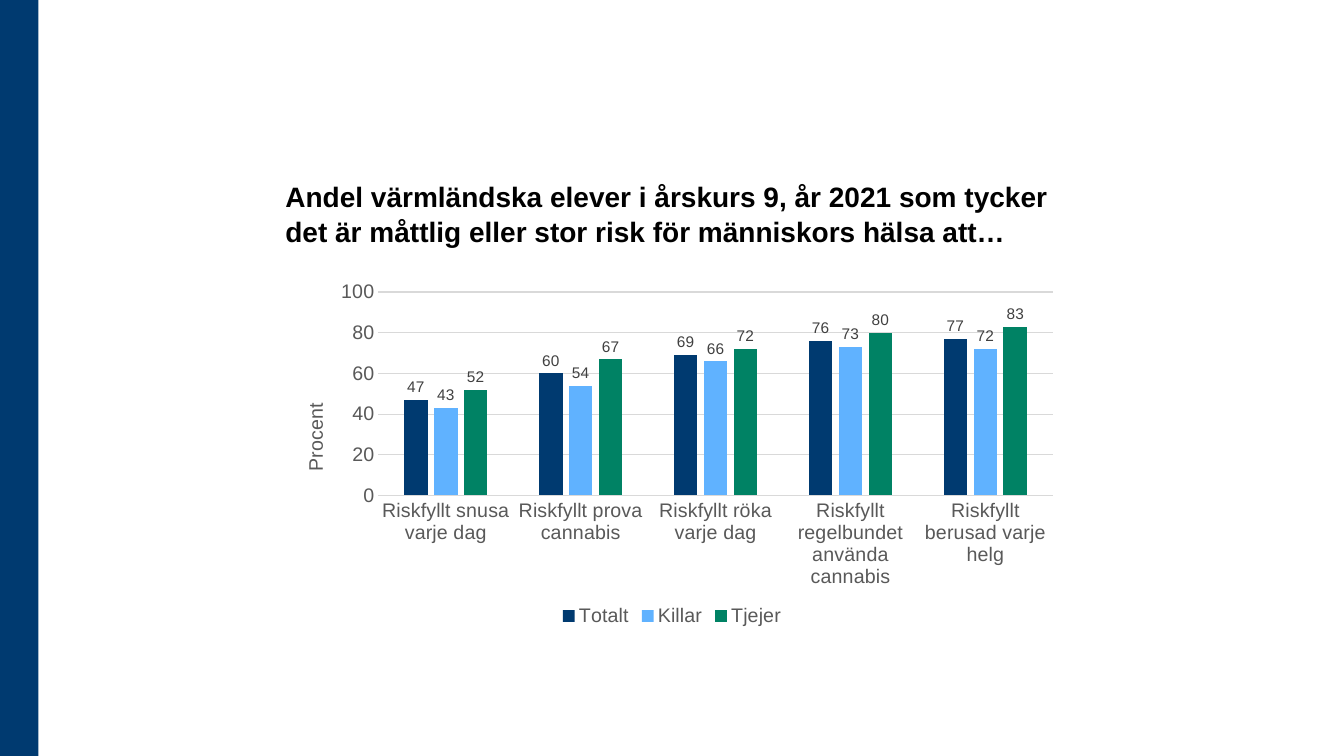
"""Build a slide comparing how risky pupils find tobacco, cannabis and alcohol."""
from dataclasses import dataclass

from lxml.etree import SubElement
from pptx import Presentation
from pptx.chart.data import CategoryChartData
from pptx.dml.color import RGBColor as RGB
from pptx.enum.chart import XL_CHART_TYPE as CHART, XL_LABEL_POSITION as LABEL
from pptx.enum.chart import XL_LEGEND_POSITION as LEGEND, XL_TICK_MARK as TICK
from pptx.enum.shapes import MSO_SHAPE as SHAPE
from pptx.enum.text import MSO_ANCHOR as ANCHOR, PP_ALIGN as ALIGN
from pptx.oxml.ns import qn
from pptx.util import Inches, Pt


@dataclass(frozen=True)
class Theme:
    font: str = "Arial"
    navy: str = "003A70"
    sky: str = "60B2FF"
    green: str = "008264"
    black: str = "000000"
    axis: str = "595959"
    label: str = "404040"
    grid: str = "D9D9D9"
    title_size: int = 20
    axis_size: int = 14
    label_size: int = 11


class SlideBuilder:
    def __init__(self, prs, theme):
        self.theme = theme
        self.slide = prs.slides.add_slide(prs.slide_layouts[5])

    def style(self, font, size, color, bold=False):
        font.name, font.size, font.bold = self.theme.font, Pt(size), bold
        font.color.rgb = RGB.from_string(color)

    def rule(self, line):
        line.color.rgb = RGB.from_string(self.theme.grid)
        line.width = Pt(0.75)

    def place(self, parent, index, **fractions):
        for old in parent.findall(qn("c:layout")):
            parent.remove(old)
        layout = SubElement(parent, qn("c:layout"))
        manual = SubElement(layout, qn("c:manualLayout"))
        if "w" in fractions:
            SubElement(manual, qn("c:layoutTarget")).set("val", "inner")
        for key in ("x", "y"):
            SubElement(manual, qn(f"c:{key}Mode")).set("val", "edge")
        for key, value in fractions.items():
            SubElement(manual, qn(f"c:{key}")).set("val", str(value))
        parent.insert(index, layout)

    def bar(self, *box, color):
        sp = self.slide.shapes.add_shape(SHAPE.RECTANGLE, *map(Inches, box))
        sp.shadow.inherit = False
        sp.fill.solid()
        sp.fill.fore_color.rgb = RGB.from_string(color)
        sp.line.fill.background()

    def title(self, text, *box):
        sp = self.slide.shapes.title
        sp.left, sp.top, sp.width, sp.height = map(Inches, box)
        tf = sp.text_frame
        tf.text = text
        tf.word_wrap = True
        tf.vertical_anchor = ANCHOR.BOTTOM
        p = tf.paragraphs[0]
        p.alignment = ALIGN.LEFT
        p.line_spacing = 1.05
        self.style(p.runs[0].font, self.theme.title_size, self.theme.black, True)

    def column_chart(self, categories, series, axis_title, *box):
        t = self.theme
        data = CategoryChartData(number_format="0")
        data.categories = categories
        for name, _, values in series:
            data.add_series(name, values)
        chart = self.slide.shapes.add_chart(
            CHART.COLUMN_CLUSTERED, *map(Inches, box), data).chart
        self.style(chart.font, t.axis_size, t.black)
        chart.has_title = False
        chart.has_legend = True
        chart.legend.position = LEGEND.BOTTOM
        chart.legend.include_in_layout = False
        self.style(chart.legend.font, t.axis_size, t.axis)

        plot = chart.plots[0]
        plot.gap_width, plot.overlap, plot.vary_by_categories = 219, -27, False
        for ser, (_, color, _) in zip(plot.series, series):
            ser.format.fill.solid()
            ser.format.fill.fore_color.rgb = RGB.from_string(color)
            labels = ser.data_labels
            labels.show_value = True
            labels.position = LABEL.OUTSIDE_END
            labels.number_format, labels.number_format_is_linked = "0", False
            self.style(labels.font, t.label_size, t.label)

        cat, val = chart.category_axis, chart.value_axis
        for axis in (cat, val):
            axis.major_tick_mark = axis.minor_tick_mark = TICK.NONE
            self.style(axis.tick_labels.font, t.axis_size, t.axis)
        self.rule(cat.format.line)
        val.format.line.fill.background()
        val.minimum_scale, val.maximum_scale, val.major_unit = 0, 100, 20
        val.tick_labels.number_format = "0"
        val.tick_labels.number_format_is_linked = False
        val.has_major_gridlines = True
        self.rule(val.major_gridlines.format.line)
        val.has_title = True
        tf = val.axis_title.text_frame
        tf.text = axis_title
        self.style(tf.paragraphs[0].runs[0].font, t.axis_size, t.axis)
        self.place(val.axis_title.element, 1, x=0.03, y=0.35)
        plot_area = chart.element.find(".//" + qn("c:plotArea"))
        self.place(plot_area, 0, x=0.13, y=0.05, w=0.85, h=0.57)


def main():
    theme = Theme()
    prs = Presentation()
    prs.slide_width, prs.slide_height = Inches(13.33), Inches(7.5)
    s = SlideBuilder(prs, theme)
    s.bar(0, 0, 0.38, 7.5, color=theme.navy)
    s.title("Andel värmländska elever i årskurs 9, år 2021 som tycker "
            "det är måttlig eller stor risk för människors hälsa att…",
            2.73, 1.06, 7.87, 1.45)
    categories = ["Riskfyllt snusa varje dag", "Riskfyllt prova cannabis",
                  "Riskfyllt röka varje dag",
                  "Riskfyllt regelbundet använda cannabis",
                  "Riskfyllt berusad varje helg"]
    series = [("Totalt", theme.navy, (47, 60, 69, 76, 77)),
              ("Killar", theme.sky, (43, 54, 66, 73, 72)),
              ("Tjejer", theme.green, (52, 67, 72, 80, 83))]
    s.column_chart(categories, series, "Procent", 2.73, 2.72, 7.87, 3.54)
    prs.save("out.pptx")


if __name__ == "__main__":
    main()
